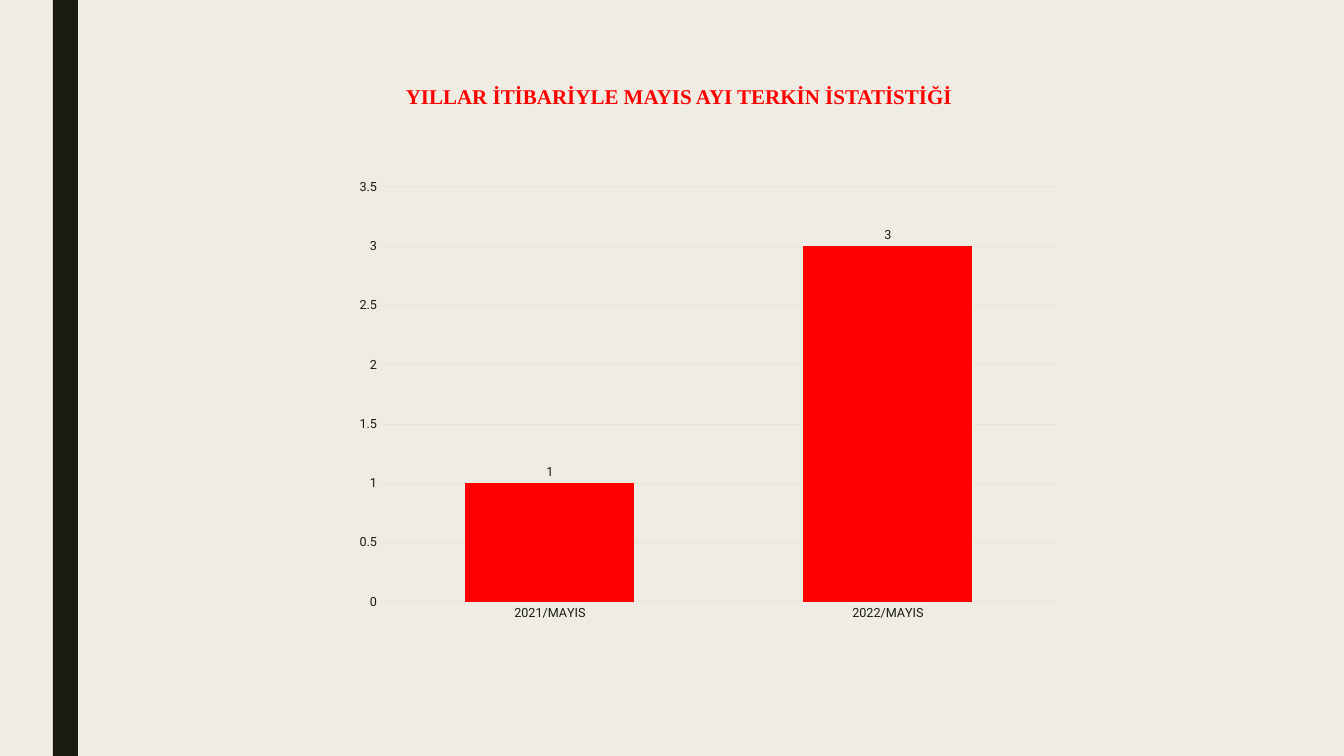
import lxml.etree
import pptx
import pptx.chart.data
import pptx.dml.color
import pptx.enum.chart
import pptx.enum.shapes
import pptx.enum.text
import pptx.oxml.ns
import pptx.util

PX = 914400 / 100.8
COLORS = {"paper": "EFEDE3", "ink": "191B0E", "red": "FF0000", "grid": "E4E7D1"}
CHART = pptx.enum.chart


def emu(px):
    return pptx.util.Emu(round(px * PX))


def rgb(name):
    return pptx.dml.color.RGBColor.from_string(COLORS[name])


def style_font(font, face, size, color, bold=False):
    font.name = face
    font.size = pptx.util.Pt(size)
    font.bold = bold
    font.color.rgb = rgb(color)


def style_line(line):
    line.color.rgb = rgb("grid")
    line.width = pptx.util.Pt(0.75)


def add_side_band(page, box):
    band = page.shapes.add_shape(
        pptx.enum.shapes.MSO_SHAPE.RECTANGLE, *map(emu, box))
    band.shadow.inherit = False
    band.fill.solid()
    band.fill.fore_color.rgb = rgb("ink")
    band.line.fill.background()


def add_title(page, box, text):
    frame = page.shapes.add_textbox(*map(emu, box)).text_frame
    frame.word_wrap = True
    frame.margin_left = frame.margin_right = 0
    frame.margin_top = frame.margin_bottom = 0
    frame.vertical_anchor = pptx.enum.text.MSO_ANCHOR.MIDDLE
    para = frame.paragraphs[0]
    para.alignment = pptx.enum.text.PP_ALIGN.CENTER
    para.line_spacing = 0.89
    span = para.add_run()
    span.text = text
    style_font(span.font, "Times New Roman", 15, "red", True)


def place_plot(chart, box, plot_box):
    """Fix the inner plot area; plot_box is measured from the chart's corner."""
    qn = pptx.oxml.ns.qn
    area = chart.plots[0]._element.getparent()
    layout = area.find(qn("c:layout"))
    if layout is None:
        layout = lxml.etree.Element(qn("c:layout"))
        area.insert(0, layout)
    manual = lxml.etree.SubElement(layout, qn("c:manualLayout"))
    left, top, width, height = plot_box
    settings = {
        "layoutTarget": "inner", "xMode": "edge", "yMode": "edge",
        "x": left / box[2], "y": top / box[3],
        "w": width / box[2], "h": height / box[3],
    }
    for tag, value in settings.items():
        text = value if isinstance(value, str) else f"{value:.4f}"
        lxml.etree.SubElement(manual, qn("c:" + tag)).set("val", text)


def add_column_chart(page, box, plot_box, values):
    data = pptx.chart.data.CategoryChartData()
    data.categories = list(values)
    data.add_series("Series 1", list(values.values()))
    chart = page.shapes.add_chart(
        CHART.XL_CHART_TYPE.COLUMN_CLUSTERED, *map(emu, box), data).chart
    chart.has_title = False
    chart.has_legend = False
    style_font(chart.font, "Roboto", 9, "ink")

    for axis in (chart.category_axis, chart.value_axis):
        axis.major_tick_mark = CHART.XL_TICK_MARK.NONE
        axis.minor_tick_mark = CHART.XL_TICK_MARK.NONE
        style_font(axis.tick_labels.font, "Roboto", 9, "ink")
    style_line(chart.category_axis.format.line)
    style_line(chart.value_axis.major_gridlines.format.line)
    chart.value_axis.format.line.fill.background()
    chart.value_axis.minimum_scale = 0
    chart.value_axis.maximum_scale = 3.5
    chart.value_axis.major_unit = 0.5

    plot = chart.plots[0]
    plot.vary_by_categories = False
    plot.gap_width = 100
    plot.overlap = -24
    fill = plot.series[0].format.fill
    fill.solid()
    fill.fore_color.rgb = rgb("red")
    plot.has_data_labels = True
    labels = plot.data_labels
    labels.show_value = True
    labels.position = CHART.XL_LABEL_POSITION.OUTSIDE_END
    style_font(labels.font, "Roboto", 9, "ink")
    place_plot(chart, box, plot_box)


def main():
    deck = pptx.Presentation()
    deck.slide_width, deck.slide_height = emu(1344), emu(756)
    page = deck.slides.add_slide(deck.slide_layouts[6])
    page.background.fill.solid()
    page.background.fill.fore_color.rgb = rgb("paper")
    add_side_band(page, (53, 0, 25, 756))
    add_title(page, (371, 79, 616, 38),
              "YILLAR İTİBARİYLE MAYIS AYI TERKİN İSTATİSTİĞİ")
    add_column_chart(page, (345, 170, 726, 460), (36, 17, 676, 415),
                     {"2021/MAYIS": 1, "2022/MAYIS": 3})
    deck.save("out.pptx")


if __name__ == "__main__":
    main()
